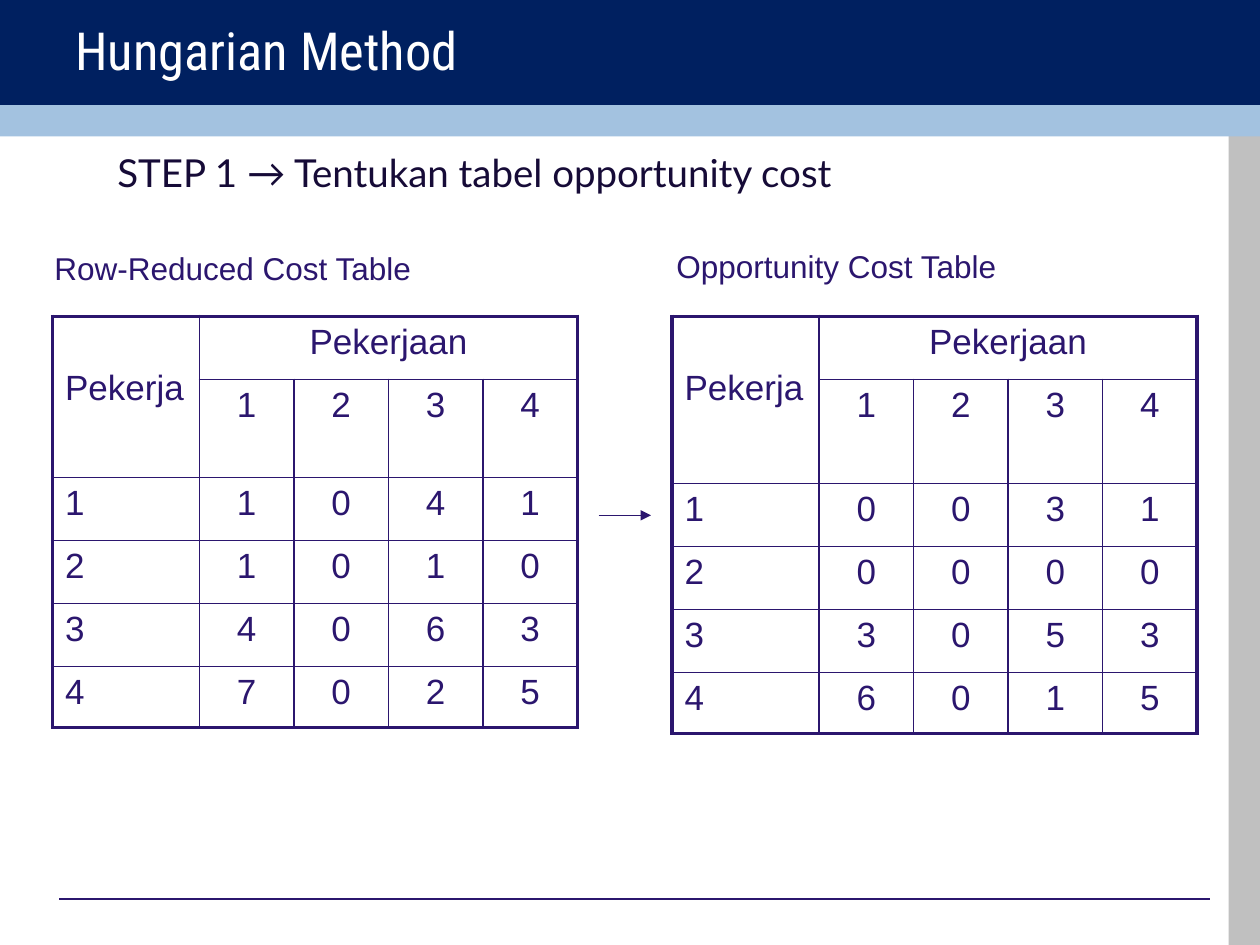
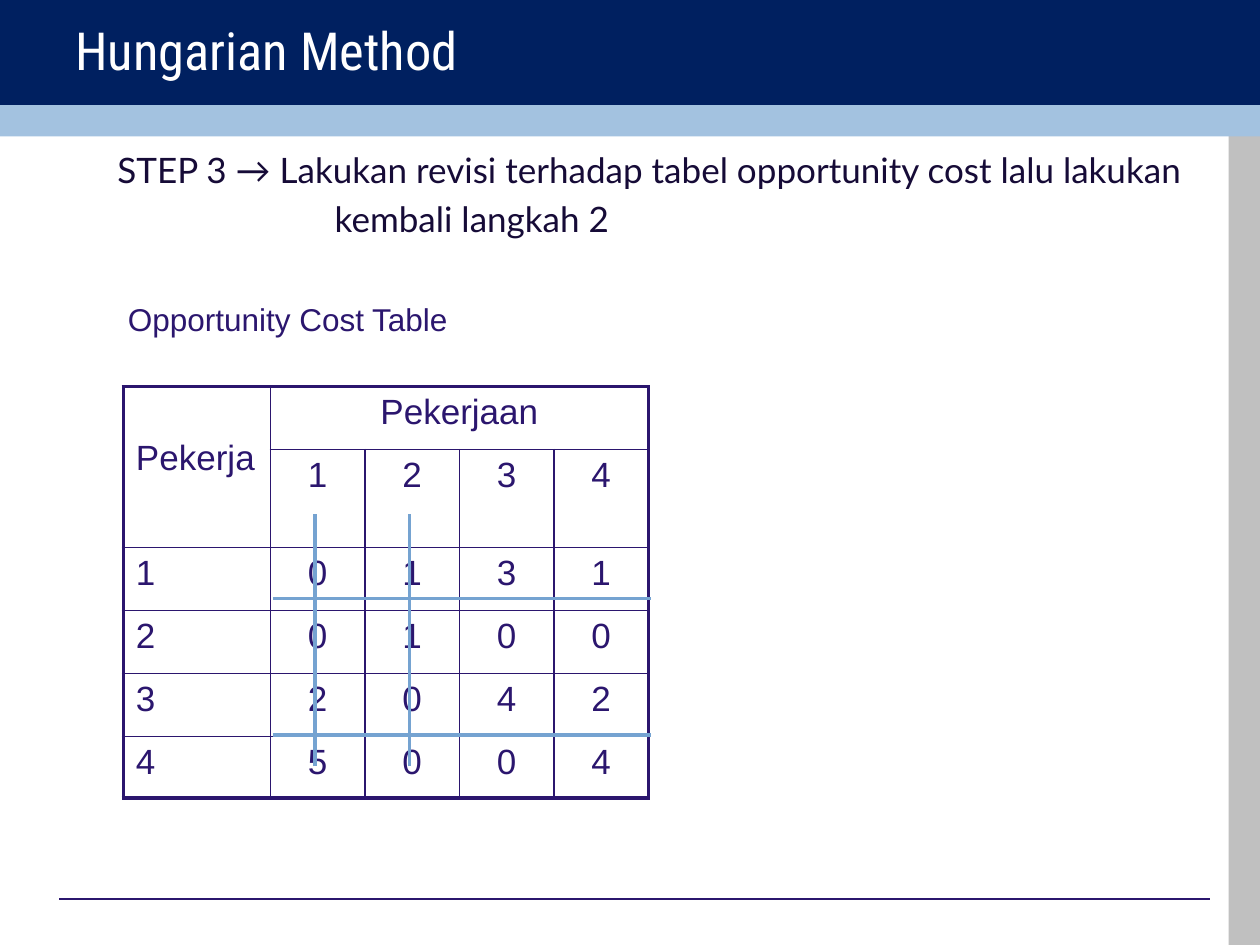
"""Build two Hungarian Method slides with cost tables."""
from dataclasses import dataclass

from lxml.etree import SubElement
from pptx import Presentation
from pptx.dml.color import RGBColor
from pptx.enum.shapes import MSO_CONNECTOR, MSO_SHAPE
from pptx.enum.text import MSO_ANCHOR, PP_ALIGN
from pptx.oxml.ns import qn
from pptx.presentation import Presentation as Deck
from pptx.slide import Slide
from pptx.table import _Cell as Cell
from pptx.util import Pt

COLOURS = {
    "navy": "002060",
    "sky": "A3C2E0",
    "grey": "C0C0C0",
    "violet": "2B166E",
    "ink": "160B37",
    "cover": "75A3D1",
    "white": "FFFFFF",
}
COLUMN_WIDTHS = [84, 54, 54, 54, 54]
OUTER_BORDER, INNER_BORDER = 2.25, 1
JOBS = ["1", "2", "3", "4"]


@dataclass(frozen=True)
class Band:
    left: float
    top: float
    width: float
    height: float
    colour: str


@dataclass(frozen=True)
class Style:
    font: str
    size: float
    colour: str


@dataclass(frozen=True)
class TextLine:
    text: str
    indent: float = 0
    space_before: float = 0


@dataclass(frozen=True)
class Line:
    start: tuple[float, float]
    end: tuple[float, float]
    colour: str = "violet"
    width: float = 0.75
    arrow: bool = False


@dataclass(frozen=True)
class CostTable:
    caption: str
    caption_left: float
    caption_top: float
    left: float
    top: float
    costs: tuple[str, ...]
    job_row_height: float = 56


BANDS = [
    Band(702, 77, 18, 463, "grey"),
    Band(0, 0, 720, 60, "navy"),
    Band(0, 60, 720, 18, "sky"),
]
FOOTER_LINE = Line((33.75, 513.75), (691.5, 513.75))
TITLE = Style("Roboto Condensed", 30, "white")
CAPTION = Style("Arial", 18, "violet")
CELL = Style("Arial", 20, "violet")


def rgb(name: str) -> RGBColor:
    return RGBColor.from_string(COLOURS[name])


def style_paragraph(para, style: Style) -> None:
    para.font.name = style.font
    para.font.size = Pt(style.size)
    para.font.color.rgb = rgb(style.colour)


def add_band(page: Slide, band: Band) -> None:
    shape = page.shapes.add_shape(
        MSO_SHAPE.RECTANGLE, Pt(band.left), Pt(band.top), Pt(band.width), Pt(band.height)
    )
    shape.shadow.inherit = False
    shape.fill.solid()
    shape.fill.fore_color.rgb = rgb(band.colour)
    shape.line.fill.background()


def add_line(page: Slide, line: Line) -> None:
    ends = [Pt(value) for value in (*line.start, *line.end)]
    connector = page.shapes.add_connector(MSO_CONNECTOR.STRAIGHT, *ends)
    connector.line.color.rgb = rgb(line.colour)
    connector.line.width = Pt(line.width)
    properties = connector._element.spPr
    if line.arrow:
        SubElement(properties.find(qn("a:ln")), qn("a:tailEnd"), type="triangle")
    SubElement(properties, qn("a:effectLst"))


def add_text(
    page: Slide,
    place: tuple[float, float, float, float],
    lines: list[TextLine],
    style: Style,
    anchor: MSO_ANCHOR = MSO_ANCHOR.TOP,
) -> None:
    box = page.shapes.add_textbox(*[Pt(value) for value in place])
    frame = box.text_frame
    frame.word_wrap = True
    frame.vertical_anchor = anchor
    for index, line in enumerate(lines):
        para = frame.add_paragraph() if index else frame.paragraphs[0]
        para.text = line.text
        para.space_before = Pt(line.space_before)
        para._p.get_or_add_pPr().set("marL", str(Pt(line.indent)))
        style_paragraph(para, style)


def set_borders(cell: Cell, row: int, column: int, row_count: int) -> None:
    outer_sides = {
        "a:lnL": column == 0,
        "a:lnR": column + cell.span_width == len(COLUMN_WIDTHS),
        "a:lnT": row == 0,
        "a:lnB": row + cell.span_height == row_count,
    }
    properties = cell._tc.get_or_add_tcPr()
    for tag, is_outer in outer_sides.items():
        width = OUTER_BORDER if is_outer else INNER_BORDER
        border = SubElement(properties, qn(tag), w=str(Pt(width)))
        fill = SubElement(border, qn("a:solidFill"))
        SubElement(fill, qn("a:srgbClr"), val=COLOURS["violet"])


def add_cost_table(page: Slide, data: CostTable) -> None:
    add_text(
        page, (data.caption_left, data.caption_top, 222, 29), [TextLine(data.caption)], CAPTION
    )
    rows = [["Pekerja", "Pekerjaan", "", "", ""], ["", *JOBS]]
    rows += [[worker, *costs] for worker, costs in zip("1234", data.costs)]
    heights = [36, data.job_row_height, 36, 36, 36, 35]
    table = page.shapes.add_table(
        len(rows), len(COLUMN_WIDTHS), Pt(data.left), Pt(data.top),
        Pt(sum(COLUMN_WIDTHS)), Pt(sum(heights)),
    ).table
    table.first_row = table.horz_banding = False
    for column, width in enumerate(COLUMN_WIDTHS):
        table.columns[column].width = Pt(width)
    table.cell(0, 0).merge(table.cell(1, 0))
    table.cell(0, 1).merge(table.cell(0, len(COLUMN_WIDTHS) - 1))
    for row, texts in enumerate(rows):
        table.rows[row].height = Pt(heights[row])
        for column, text in enumerate(texts):
            cell = table.cell(row, column)
            set_borders(cell, row, column, len(rows))
            cell.fill.background()
            para = cell.text_frame.paragraphs[0]
            para.alignment = PP_ALIGN.CENTER if column else PP_ALIGN.LEFT
            style_paragraph(para, CELL)
            if text:
                para.text = text
    worker_header = table.cell(0, 0)
    worker_header.margin_top = Pt(30)
    worker_header.margin_bottom = Pt(0)


def add_page(deck: Deck, step: list[TextLine], step_size: float) -> Slide:
    page = deck.slides.add_slide(deck.slide_layouts[6])
    for band in BANDS:
        add_band(page, band)
    add_line(page, FOOTER_LINE)
    add_text(page, (36, 6, 486, 45), [TextLine("Hungarian Method")], TITLE, MSO_ANCHOR.MIDDLE)
    add_text(page, (60, 81.5, 648, 398), step, Style("Lato", step_size, "ink"))
    return page


def add_step_one(deck: Deck) -> None:
    page = add_page(deck, [TextLine("STEP 1 → Tentukan tabel opportunity cost")], 22)
    add_cost_table(page, CostTable(
        "Row-Reduced Cost Table", 24, 139, 30, 180.75, ("1041", "1010", "4063", "7025")
    ))
    add_cost_table(page, CostTable(
        "Opportunity Cost Table", 379.5, 137.5, 384, 180.75,
        ("0031", "0000", "3053", "6015"), 59.5,
    ))
    add_line(page, Line((342, 294.5), (372, 294.5), arrow=True))


def add_step_three(deck: Deck) -> None:
    page = add_page(deck, [
        TextLine("STEP 3 → Lakukan revisi terhadap tabel opportunity cost lalu lakukan"),
        TextLine("kembali langkah 2", indent=124.2, space_before=4),
    ], 20)
    add_cost_table(page, CostTable(
        "Opportunity Cost Table", 66, 168, 70.5, 221, ("0131", "0100", "2042", "5004")
    ))
    covers = [((156, y), (372, y)) for y in (342, 420)]
    covers += [((x, 438), (x, 294)) for x in (180, 234)]
    for start, end in covers:
        add_line(page, Line(start, end, "cover", 2.25))


def main() -> None:
    deck = Presentation()
    deck.slide_width, deck.slide_height = Pt(720), Pt(540)
    add_step_one(deck)
    add_step_three(deck)
    deck.save("out.pptx")


if __name__ == "__main__":
    main()
